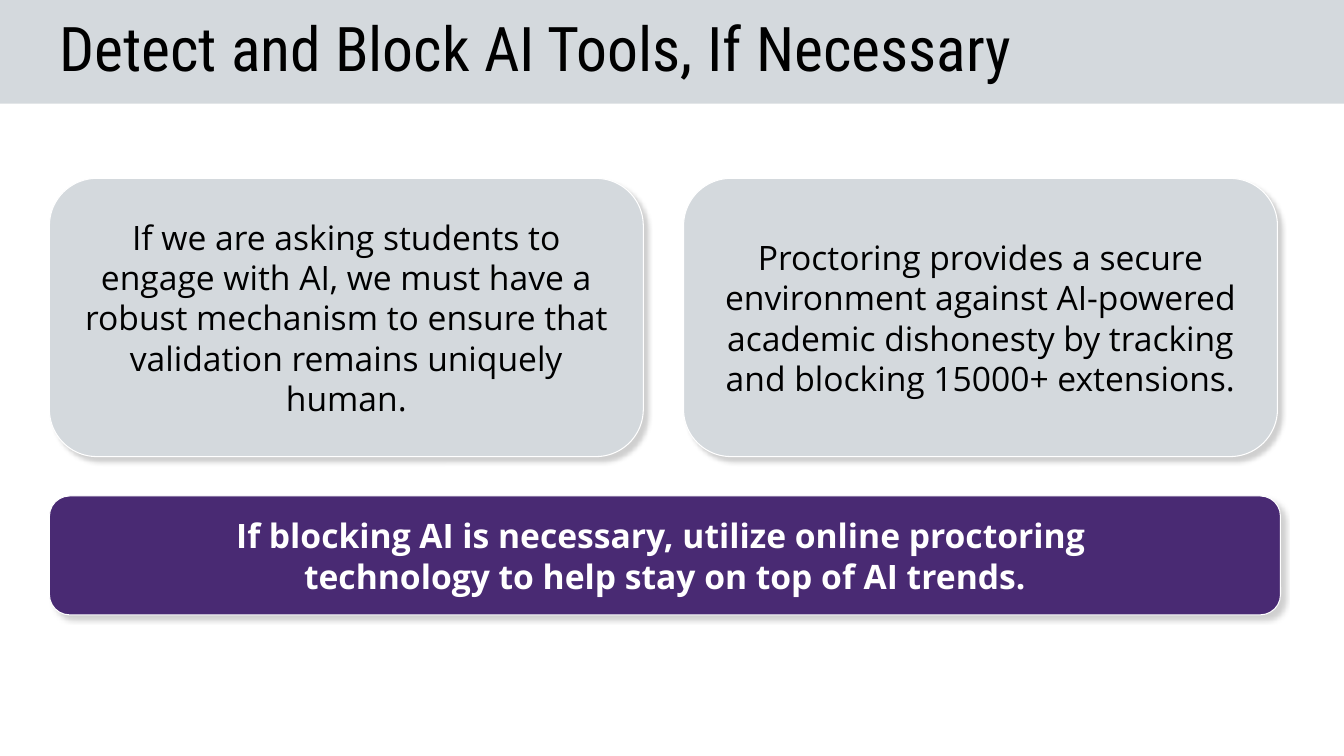
from lxml.etree import SubElement
from pptx import Presentation
from pptx.dml.color import RGBColor
from pptx.enum.shapes import MSO_SHAPE
from pptx.enum.text import MSO_ANCHOR, PP_ALIGN
from pptx.oxml.ns import qn
from pptx.util import Pt

PX = 9144  # EMU, 100 px to the inch
WIDE, HIGH = 1333, 750
LEFT, GAP = 49, 40
INSET = 10
CARD_W = 589
COLORS = {"gray": "D4D9DD", "plum": "492A73", "white": "FFFFFF", "black": "000000"}
CARDS = [
    "If we are asking students to engage with AI, we must have a robust "
    "mechanism to ensure that validation remains uniquely human.",
    "Proctoring provides a secure environment against AI-powered academic "
    "dishonesty by tracking and blocking 15000+ extensions.",
]
ADVICE = ("If blocking AI is necessary, utilize online proctoring \n"
          "technology to help stay on top of AI trends.")


def color(name):
    return RGBColor.from_string(COLORS[name])


def scale(box):
    return [n * PX for n in box]


def write(shape, text, font, size, ink, align, bold=False):
    frame = shape.text_frame
    frame.word_wrap = True
    frame.vertical_anchor = MSO_ANCHOR.MIDDLE
    para = frame.paragraphs[0]
    para.text = text
    para.alignment = align
    for run in para.runs:
        run.font.name = font
        run.font.size = Pt(size)
        run.font.bold = bold
        run.font.color.rgb = color(ink)
    return para


def add_shade(shape):
    """Cast a soft shadow to the lower right."""
    effects = SubElement(shape._element.spPr, qn("a:effectLst"))
    shade = SubElement(effects, qn("a:outerShdw"), blurRad=str(Pt(3.4)),
                       dist=str(Pt(4.5)), dir=str(50 * 60000),
                       algn="tl", rotWithShape="0")
    tint = SubElement(shade, qn("a:srgbClr"), val=COLORS["black"])
    SubElement(tint, qn("a:alpha"), val="18000")


def add_header(slide, box, text):
    x, y, w, h = box
    band = slide.shapes.add_shape(MSO_SHAPE.RECTANGLE, *scale(box))
    band.shadow.inherit = False
    band.fill.solid()
    band.fill.fore_color.rgb = color("gray")
    band.line.fill.background()
    title = slide.shapes.add_textbox(
        *scale((x + LEFT, y + 8, w - 2 * LEFT, h - 16)))
    para = write(title, text, "Roboto Condensed", 44, "black", PP_ALIGN.LEFT)
    para.line_spacing = 0.9


def add_card(slide, box, text, fill, ink, bold=False):
    card = slide.shapes.add_shape(MSO_SHAPE.ROUNDED_RECTANGLE, *scale(box))
    card.adjustments[0] = 0.17
    card.fill.solid()
    card.fill.fore_color.rgb = color(fill)
    card.line.color.rgb = color("white")
    card.line.width = Pt(0.75)
    add_shade(card)
    frame = card.text_frame
    frame.margin_left = frame.margin_right = INSET * PX
    frame.margin_top = frame.margin_bottom = INSET * PX
    write(card, text, "Open Sans", 24, ink, PP_ALIGN.CENTER, bold)


def add_body(slide, box):
    """Lay the cards side by side with the advice bar below them."""
    x, y, w, h = box
    bar_h = 118
    card_h = h - bar_h - GAP + 1
    for i, text in enumerate(CARDS):
        left = x + i * (CARD_W + GAP)
        add_card(slide, (left, y, CARD_W, card_h), text, "gray", "black")
    add_card(slide, (x, y + h - bar_h, w, bar_h), ADVICE, "plum", "white", True)


def main():
    deck = Presentation()
    deck.slide_width, deck.slide_height = scale((WIDE, HIGH))
    slide = deck.slides.add_slide(deck.slide_layouts[6])
    add_header(slide, (0, 0, WIDE, 103), "Detect and Block AI Tools, If Necessary")
    add_body(slide, (LEFT, 177, 1221, 433))
    deck.save("out.pptx")


if __name__ == "__main__":
    main()
